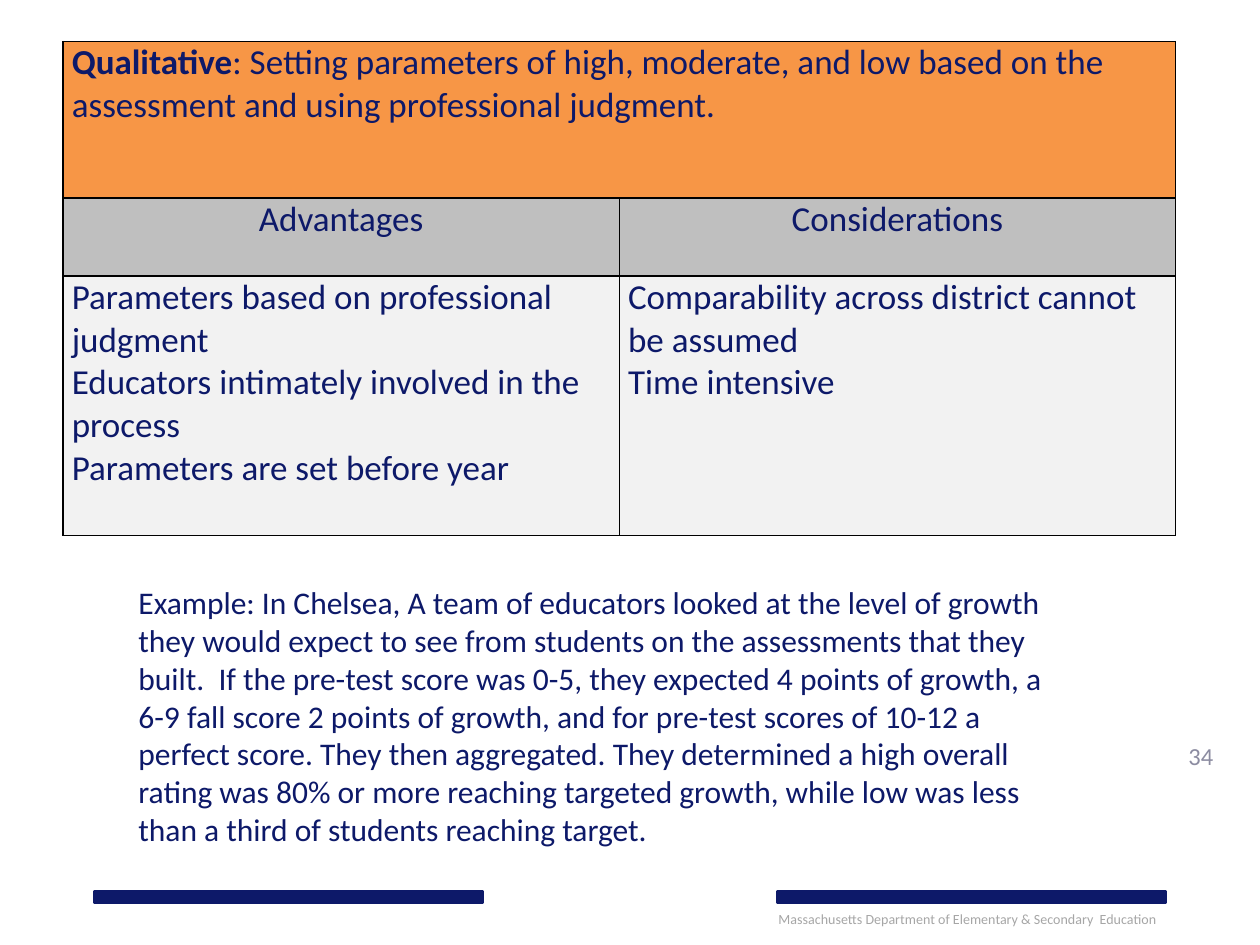
import pptx
import pptx.util
import pptx.dml.color
import pptx.enum.shapes
import pptx.enum.text
from lxml import etree

Inches = pptx.util.Inches
ALIGN = pptx.enum.text.PP_ALIGN
ANCHOR = pptx.enum.text.MSO_ANCHOR

THEME = {
    "font": "Calibri",
    "navy": "0D1969", "muted": "8C8CA1", "footer": "A6A6A6", "border": "000000",
    "title_fill": "F79646", "heading_fill": "BFBFBF", "body_fill": "F2F2F2",
    "table_size": 20, "example_size": 18, "number_size": 14, "footer_size": 8,
    "border_width": 1, "bar_line": 2,
}

TITLE = [("Qualitative", True),
         (": Setting parameters of high, moderate, and low based on the assessment "
          "and using professional judgment.", False)]
COLUMNS = [
    ("Advantages", ["Parameters based on professional judgment",
                    "Educators intimately involved in the process",
                    "Parameters are set before year"]),
    ("Considerations", ["Comparability across district cannot be assumed",
                        "Time intensive"]),
]
EXAMPLE = (
    "Example: In Chelsea, A team of educators looked at the level of growth they would "
    "expect to see from students on the assessments that they built.  If the pre-test "
    "score was 0-5, they expected 4 points of growth, a 6-9 fall score 2 points of growth, "
    "and for pre-test scores of 10-12 a perfect score. They then aggregated. They determined "
    "a high overall rating was 80% or more reaching targeted growth, while low was less than "
    "a third of students reaching target."
)
FOOTER = "Massachusetts Department of Elementary & Secondary  Education"
PAGE_NUMBER = "34"

TABLE_AREA = (0.5, 0.33, 8.83, 3.92)
ROW_HEIGHTS = [1.24, 0.62, 2.06]
BAR_LEFTS = [0.75, 6.17]
BAR_TOP, BAR_WIDTH, BAR_HEIGHT = 7.08, 3.08, 0.08


def color(name):
    return pptx.dml.color.RGBColor.from_string(THEME[name])


def style(font, size, ink="navy", bold=False):
    font.name = THEME["font"]
    font.size = pptx.util.Pt(THEME[size])
    font.color.rgb = color(ink)
    font.bold = bold


def add_text(page, area, text, size, ink, align=ALIGN.LEFT, anchor=ANCHOR.TOP):
    box = page.shapes.add_textbox(*map(Inches, area))
    frame = box.text_frame
    frame.word_wrap = True
    frame.vertical_anchor = anchor
    frame.text = text
    para = frame.paragraphs[0]
    para.alignment = align
    style(para.runs[0].font, size, ink)


def add_bar(page, left):
    bar = page.shapes.add_shape(pptx.enum.shapes.MSO_SHAPE.RECTANGLE,
                                *map(Inches, (left, BAR_TOP, BAR_WIDTH, BAR_HEIGHT)))
    bar.shadow.inherit = False
    bar.fill.solid()
    bar.fill.fore_color.rgb = color("navy")
    bar.line.color.rgb = color("navy")
    bar.line.width = pptx.util.Pt(THEME["bar_line"])


def format_cell(cell, fill):
    cell.margin_left = cell.margin_right = Inches(0.07)
    cell.margin_top = cell.margin_bottom = 0
    properties = cell._tc.get_or_add_tcPr()
    namespace = pptx.oxml.ns.qn
    for side in ("lnL", "lnR", "lnT", "lnB"):
        line = etree.SubElement(properties, namespace("a:" + side),
                                w=str(pptx.util.Pt(THEME["border_width"])))
        solid = etree.SubElement(line, namespace("a:solidFill"))
        etree.SubElement(solid, namespace("a:srgbClr"), val=THEME["border"])
    cell.fill.solid()
    cell.fill.fore_color.rgb = color(fill)


def fill_cell(cell, lines, align=ALIGN.LEFT):
    cell.text_frame.text = "\n".join(lines)
    for para in cell.text_frame.paragraphs:
        para.alignment = align
        style(para.runs[0].font, "table_size")


def add_comparison(page):
    table = page.shapes.add_table(len(ROW_HEIGHTS), len(COLUMNS),
                                  *map(Inches, TABLE_AREA)).table
    table.first_row = table.horz_banding = False
    for column in table.columns:
        column.width = Inches(TABLE_AREA[2] / len(COLUMNS))
    fills = ("title_fill", "heading_fill", "body_fill")
    for row, height, fill in zip(table.rows, ROW_HEIGHTS, fills):
        row.height = Inches(height)
        for cell in row.cells:
            format_cell(cell, fill)

    title = table.cell(0, 0)
    title.merge(table.cell(0, len(COLUMNS) - 1))
    para = title.text_frame.paragraphs[0]
    for text, bold in TITLE:
        span = para.add_run()
        span.text = text
        style(span.font, "table_size", bold=bold)

    for index, (heading, points) in enumerate(COLUMNS):
        fill_cell(table.cell(1, index), [heading], ALIGN.CENTER)
        fill_cell(table.cell(2, index), points)


def main():
    deck = pptx.Presentation()
    deck.slide_width, deck.slide_height = Inches(10), Inches(7.5)
    page = deck.slides.add_slide(deck.slide_layouts[6])
    for left in BAR_LEFTS:
        add_bar(page, left)
    add_text(page, (6.08, 7.18, 3.25, 0.24), FOOTER, "footer_size", "footer")
    add_text(page, (9.24, 5.75, 0.58, 0.5), PAGE_NUMBER, "number_size", "muted",
             ALIGN.CENTER, ANCHOR.MIDDLE)
    add_comparison(page)
    add_text(page, (1, 4.58, 7.58, 2.22), EXAMPLE, "example_size", "navy")
    deck.save("out.pptx")


if __name__ == "__main__":
    main()
